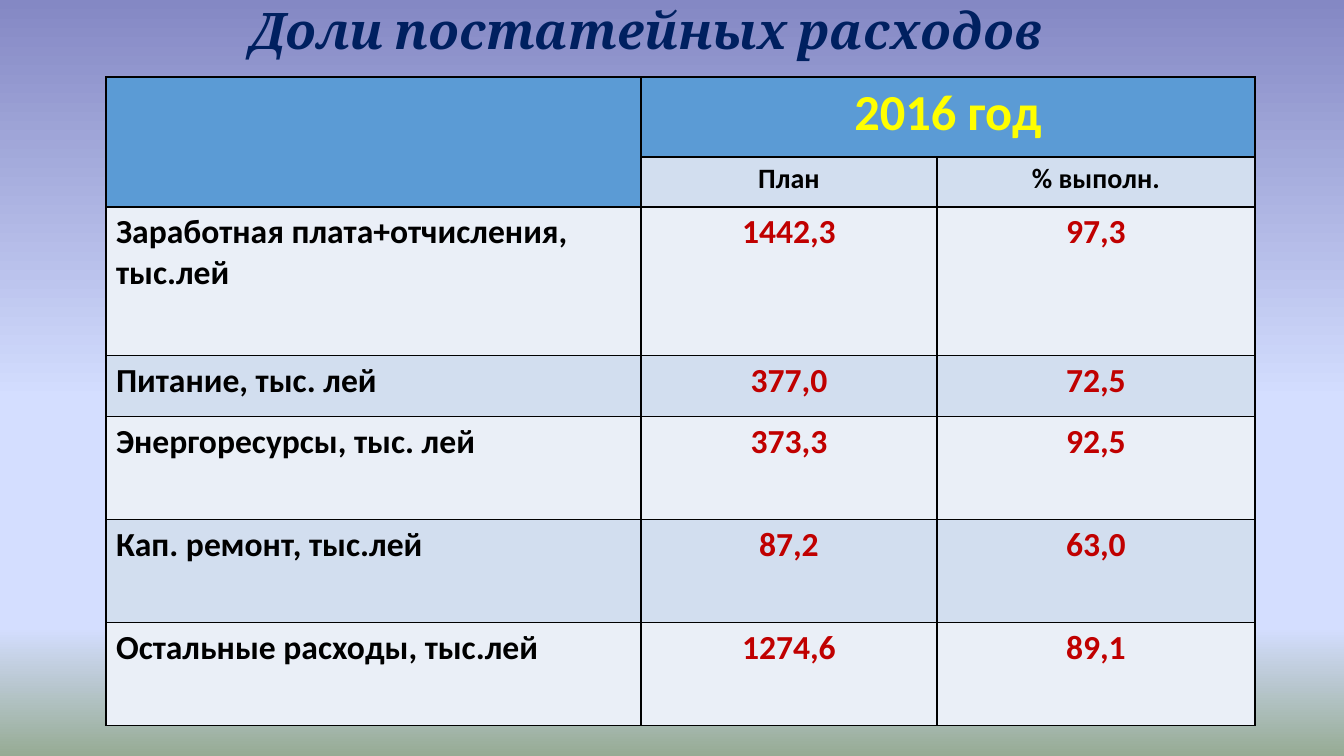
from lxml import etree
from pptx import Presentation
from pptx.dml.color import RGBColor
from pptx.enum.text import MSO_ANCHOR as Anchor, PP_ALIGN as Align
from pptx.oxml.ns import qn
from pptx.util import Emu, Pt

TITLE = "Доли постатейных расходов"
YEAR = "2016 год"
SUBHEADS = ["План", "% выполн."]
EXPENSES = [
    ("Заработная плата+отчисления, тыс.лей", "1442,3", "97,3"),
    ("Питание, тыс. лей", "377,0", "72,5"),
    ("Энергоресурсы, тыс. лей", "373,3", "92,5"),
    ("Кап. ремонт, тыс.лей", "87,2", "63,0"),
    ("Остальные расходы, тыс.лей", "1274,6", "89,1"),
]
BACKGROUND = [(0, "8488C4"), (53, "D4DEFF"), (83, "D4DEFF"), (100, "96AB94")]
HEADER, BANDS = "5B9BD5", ["EAEFF7", "D2DEEF"]
BLACK, RED, YELLOW, NAVY = "000000", "C00000", "FFFF00", "002060"
TITLE_BOX = (197, 45, 899, 31)
TABLE_LEFT, TABLE_TOP = 106, 77
COLUMNS = [535, 296, 318]
ROWS = [80, 50, 149, 61, 103, 103, 103]


def px(length):
    return Emu(round(length * 914400 / 100.8))


def color(value):
    return RGBColor.from_string(value)


def write(frame, text, size, tone, align, face="Calibri", italic=False):
    para = frame.paragraphs[0]
    para.alignment = align
    span = para.add_run()
    span.text = text
    font = span.font
    font.name, font.size, font.bold, font.italic = face, Pt(size), True, italic
    font.color.rgb = color(tone)


def outline(cell):
    props = cell._tc.get_or_add_tcPr()
    for index, side in enumerate(("a:lnL", "a:lnR", "a:lnT", "a:lnB")):
        line = etree.Element(qn(side), w=str(Pt(1)))
        fill = etree.SubElement(line, qn("a:solidFill"))
        etree.SubElement(fill, qn("a:srgbClr"), val=BLACK)
        props.insert(index, line)


def paint_background(page):
    fill = page.background.fill
    fill.gradient()
    fill.gradient_angle = 270
    stops = page.background._cSld.find(".//" + qn("a:gsLst"))
    for stop in list(stops):
        stops.remove(stop)
    for percent, tone in BACKGROUND:
        stop = etree.SubElement(stops, qn("a:gs"), pos=str(percent * 1000))
        etree.SubElement(stop, qn("a:srgbClr"), val=tone)


def add_title(page):
    frame = page.shapes.add_textbox(*map(px, TITLE_BOX)).text_frame
    frame.word_wrap = True
    frame.vertical_anchor = Anchor.BOTTOM
    frame.margin_top, frame.margin_bottom = 0, px(16)
    write(frame, TITLE, 36, NAVY, Align.CENTER, "Cambria", True)


def add_expenses(page):
    table = page.shapes.add_table(
        len(ROWS), len(COLUMNS), px(TABLE_LEFT), px(TABLE_TOP),
        px(sum(COLUMNS)), px(sum(ROWS))).table
    for column, width in zip(table.columns, COLUMNS):
        column.width = px(width)
    for row, height in zip(table.rows, ROWS):
        row.height = px(height)
    for r in range(len(ROWS)):
        for c in range(len(COLUMNS)):
            cell = table.cell(r, c)
            header = r == 0 or (r == 1 and c == 0)
            cell.fill.solid()
            cell.fill.fore_color.rgb = color(HEADER if header else BANDS[r % 2])
            outline(cell)
    table.cell(0, 0).merge(table.cell(1, 0))
    table.cell(0, 1).merge(table.cell(0, 2))
    write(table.cell(0, 1).text_frame, YEAR, 36, YELLOW, Align.CENTER)
    for c, text in enumerate(SUBHEADS, 1):
        write(table.cell(1, c).text_frame, text, 20, BLACK, Align.CENTER)
    for r, expense in enumerate(EXPENSES, 2):
        for c, text in enumerate(expense):
            tone, align = (RED, Align.CENTER) if c else (BLACK, Align.LEFT)
            write(table.cell(r, c).text_frame, text, 24, tone, align)


def main():
    deck = Presentation()
    deck.slide_width, deck.slide_height = px(1344), px(756)
    page = deck.slides.add_slide(deck.slide_layouts[6])
    paint_background(page)
    add_title(page)
    add_expenses(page)
    deck.save("out.pptx")


if __name__ == "__main__":
    main()
